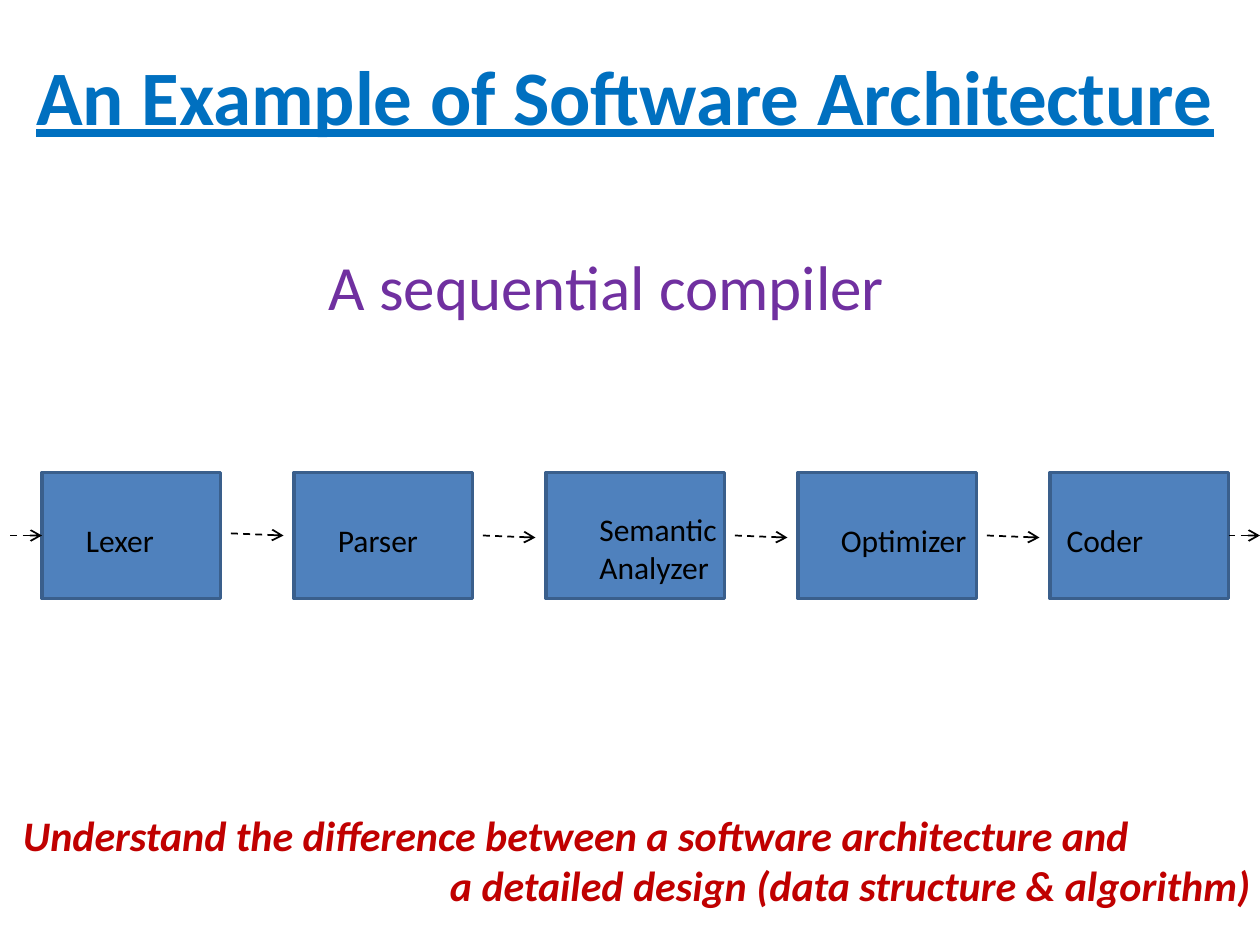
from lxml import etree
from pptx import Presentation
from pptx.dml.color import RGBColor
from pptx.enum.dml import MSO_LINE
from pptx.enum.shapes import MSO_CONNECTOR, MSO_SHAPE
from pptx.enum.text import MSO_ANCHOR, PP_ALIGN
from pptx.oxml.ns import qn
from pptx.util import Inches, Pt

TITLE_BLUE = RGBColor(0x00, 0x70, 0xC0)
PURPLE = RGBColor(0x70, 0x30, 0xA0)
BOX_FILL = RGBColor(0x4F, 0x81, 0xBD)
BOX_LINE = RGBColor(0x3A, 0x5F, 0x8C)
RED = RGBColor(0xC0, 0x00, 0x00)
BLACK = RGBColor(0x00, 0x00, 0x00)

FONT = "Calibri"
COLS, ROWS = 120, 90    # slide grid
STAGE_STEP = 24         # columns from one stage to the next
BOX_LEFT, BOX_TOP, BOX_W, BOX_H = 4, 45, 17, 12
FLOW_ROW = 51           # middle of the boxes


class Slide:
    def __init__(self, prs):
        self.s = prs.slides.add_slide(prs.slide_layouts[5])
        self.col = prs.slide_width / COLS
        self.row = prs.slide_height / ROWS

    def place(self, x, y, w, h):
        return [int(v) for v in (x * self.col, y * self.row,
                                 w * self.col, h * self.row)]

    def add_lines(self, tf, lines, size, color, aligns=(PP_ALIGN.LEFT,),
                  bold=False, italic=False, underline=False):
        for i, line in enumerate(lines):
            p = tf.paragraphs[0] if i == 0 else tf.add_paragraph()
            p.alignment = aligns[i % len(aligns)]
            r = p.add_run()
            r.text = line
            f = r.font
            f.name, f.size, f.color.rgb = FONT, Pt(size), color
            f.bold, f.italic, f.underline = bold, italic, underline

    def title(self, text, *box, **style):
        sp = self.s.shapes.title
        sp.left, sp.top, sp.width, sp.height = self.place(*box)
        tf = sp.text_frame
        tf.word_wrap = False
        tf.vertical_anchor = MSO_ANCHOR.TOP
        self.add_lines(tf, [text], aligns=(PP_ALIGN.CENTER,), **style)

    def text(self, lines, *box, wrap=False, **style):
        tf = self.s.shapes.add_textbox(*self.place(*box)).text_frame
        tf.word_wrap = wrap
        self.add_lines(tf, lines, **style)

    def box(self, *box):
        sp = self.s.shapes.add_shape(MSO_SHAPE.RECTANGLE, *self.place(*box))
        sp.shadow.inherit = False
        sp.fill.solid()
        sp.fill.fore_color.rgb = BOX_FILL
        sp.line.color.rgb = BOX_LINE
        sp.line.width = Pt(2)

    def arrow(self, *ends):
        c = self.s.shapes.add_connector(MSO_CONNECTOR.STRAIGHT,
                                        *self.place(*ends))
        c.line.color.rgb = BLACK
        c.line.width = Pt(1)
        c.line.dash_style = MSO_LINE.DASH
        sppr = c._element.spPr
        etree.SubElement(sppr.find(qn("a:ln")), qn("a:tailEnd"), type="arrow")
        etree.SubElement(sppr, qn("a:effectLst"))


def main():
    prs = Presentation()
    prs.slide_width, prs.slide_height = Inches(10), Inches(7.5)
    s = Slide(prs)

    # Headings
    s.title("An Example of Software Architecture", 1.7, 4, 115.7, 10.1,
            size=44, color=TITLE_BLUE, bold=True, underline=True)
    s.text(["A sequential compiler"], 30.1, 23, 55.8, 8.5,
           size=36, color=PURPLE)

    # Compiler stages: label lines, left, top, width, height
    stages = [
        (["Lexer"], 7, 49, 9, 4.8),
        (["Parser"], 31, 49, 10.1, 4.8),
        (["Semantic", "Analyzer"], 55.9, 48, 13.8, 8.5),
        (["Optimizer"], 78.9, 49, 14.5, 4.8),
        (["Coder"], 100.4, 49, 9.8, 4.8),
    ]
    for i in range(len(stages)):
        s.box(BOX_LEFT + i * STAGE_STEP, BOX_TOP, BOX_W, BOX_H)

    # Flow into, between and out of the stages
    s.arrow(1, FLOW_ROW, BOX_LEFT, FLOW_ROW)
    for i in range(len(stages) - 1):
        x = BOX_LEFT + BOX_W + 1 + i * STAGE_STEP
        y = FLOW_ROW if i else FLOW_ROW - 0.2
        s.arrow(x, y, x + 5, y + 0.2)
    s.arrow(COLS - 3, FLOW_ROW, COLS, FLOW_ROW)

    # Stage labels
    for lines, *box in stages:
        s.text(lines, *box, size=18, color=BLACK)

    # Closing remark
    s.text(["Understand the difference between a software architecture and",
            "a detailed design (data structure & algorithm)"],
           1, 76.5, 119.3, 10.9, wrap=True, size=24, color=RED,
           aligns=(PP_ALIGN.LEFT, PP_ALIGN.RIGHT), bold=True, italic=True)

    prs.save("out.pptx")


if __name__ == "__main__":
    main()
